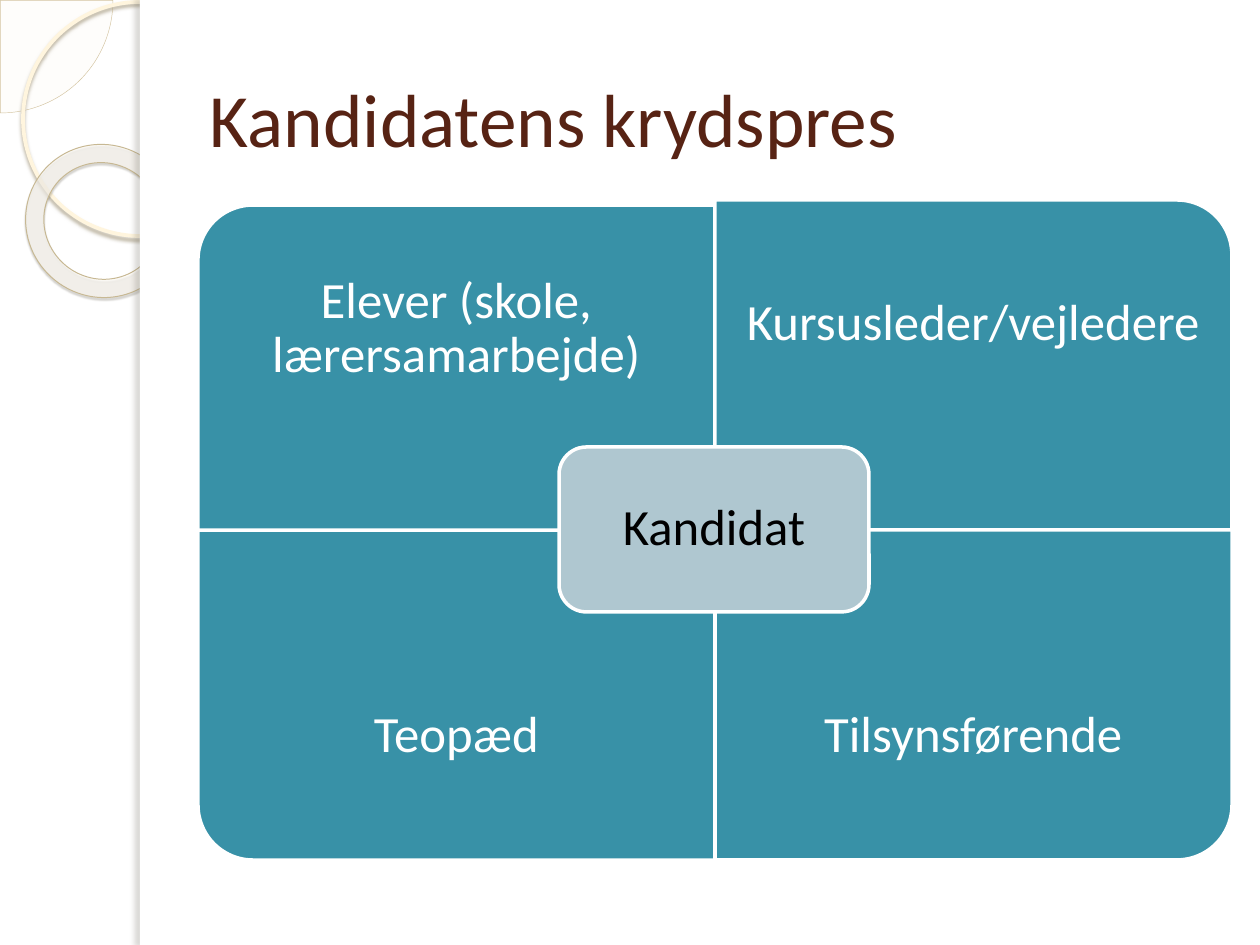
from lxml.etree import SubElement
from pptx import Presentation
from pptx.dml.color import RGBColor
from pptx.enum.shapes import MSO_SHAPE as Preset
from pptx.enum.text import MSO_ANCHOR as Anchor, PP_ALIGN as Align
from pptx.oxml.ns import qn
from pptx.util import Emu, Pt


def px(length):
    """Turn pixels into EMU."""
    return Emu(round(length * 914400 / 126))


def color(code):
    """Turn a hex string into a colour."""
    return RGBColor.from_string(code)


def set_alpha(color_element, percent):
    """Give a colour element an opacity."""
    SubElement(color_element, qn("a:alpha"), val=str(percent * 1000))


def write(frame, text, size=29, ink="FFFFFF", align=Align.CENTER, spacing=0.9):
    """Write one formatted paragraph into a text frame."""
    paragraph = frame.paragraphs[0]
    paragraph.alignment = align
    paragraph.line_spacing = spacing
    run = paragraph.add_run()
    run.text = text
    run.font.name = "Calibri"
    run.font.size = Pt(size)
    run.font.color.rgb = color(ink)


class Board:
    """Hold the style and the current slide."""

    tile = "3891A7"
    white = "FFFFFF"
    ink = "572314"

    def __init__(self, slide):
        """Keep the slide to draw on."""
        self.slide = slide

    def shape(self, preset, box, fill=None, alpha=100, line=None, weight=2,
              turn=0, adjust=(), shadow=None):
        """Add a preset shape whose box is given as it shows after quarter turns."""
        left, top, width, height = box
        if turn in (90, 270):
            left, top = left + (width - height) / 2, top + (height - width) / 2
            width, height = height, width
        item = self.slide.shapes.add_shape(preset, *map(px, (left, top, width, height)))
        item.rotation = turn
        for index, value in enumerate(adjust):
            item.adjustments[index] = value
        if fill:
            item.fill.solid()
            item.fill.fore_color.rgb = color(fill)
            if alpha < 100:
                set_alpha(item.fill._xPr.find(qn("a:solidFill"))[0], alpha)
        else:
            item.fill.background()
        if line:
            item.line.color.rgb = color(line)
            item.line.width = Pt(weight)
        else:
            item.line.fill.background()
        item.shadow.inherit = False
        if shadow:
            self.cast(item, *shadow)

    def cast(self, item, tint, opacity, blur, distance, angle):
        """Give a shape an outer shadow."""
        effects = item._element.spPr.find(qn("a:effectLst"))
        outer = SubElement(effects, qn("a:outerShdw"), blurRad=str(Pt(blur)),
                           dist=str(Pt(distance)), dir=str(angle * 60000),
                           algn="tl", rotWithShape="0")
        set_alpha(SubElement(outer, qn("a:srgbClr"), val=tint), opacity)

    def label(self, text, box, inset, **style):
        """Add a vertically centred text box."""
        frame = self.slide.shapes.add_textbox(*map(px, box)).text_frame
        frame.word_wrap = True
        frame.vertical_anchor = Anchor.MIDDLE
        frame.margin_left = frame.margin_right = px(inset)
        frame.margin_top = frame.margin_bottom = px(inset)
        write(frame, text, **style)

    def side_ornament(self):
        """Draw the rings and the white page edge."""
        self.shape(Preset.PIE, (-112, -112, 225, 225), "FEFAF4", alpha=33,
                   line="D3C39F", weight=0.25, adjust=(0, 54))
        self.shape(Preset.OVAL, (23, 2, 234, 234), line="FFF5DE", weight=2.15,
                   shadow=("B0A68F", 85, 2, 2, 90))
        self.shape(Preset.DONUT, (25, 145, 155, 152), "FFFCF6", alpha=60,
                   line="C7B893", weight=0.58, turn=38.6, adjust=(0.12,),
                   shadow=("5A5444", 35, 1, 1.2, 75))
        self.shape(Preset.RECTANGLE, (140, 0, 1120, 945), self.white)
        self.shape(Preset.RECTANGLE, (140, 0, 10, 945), self.white,
                   shadow=("736F63", 25, 3, 3, 180))

    def quadrant(self, text, left, top, turn, label_top):
        """Draw one quarter of the matrix with its label."""
        self.shape(Preset.ROUND_1_RECTANGLE, (left, top, 517, 330), self.tile,
                   line=self.white, turn=turn)
        self.label(text, (left, label_top, 517, 248), 29)


def main():
    """Build the slide and save it."""
    deck = Presentation()
    deck.slide_width, deck.slide_height = px(1260), px(945)
    board = Board(deck.slides.add_slide(deck.slide_layouts[6]))
    board.side_ornament()
    board.label("Kandidatens krydspres", (198, 38, 1033, 158), 12, size=43,
                ink=board.ink, align=Align.LEFT, spacing=1)
    west, east, south = 198, 715, 530
    for quarter in (
        ("Elever (skole, lærersamarbejde)", west, 205, 270, 205),
        ("Kursusleder/vejledere", east, 200, 0, 200),
        ("Teopæd", west, south, 180, 612),
        ("Tilsynsførende", east, south, 90, 612),
    ):
        board.quadrant(*quarter)
    center = (559, 447, 310, 165)
    board.shape(Preset.ROUNDED_RECTANGLE, center, "AFC7D0", line=board.white)
    board.label("Kandidat", center, 23, ink="000000")
    deck.save("out.pptx")


if __name__ == "__main__":
    main()
